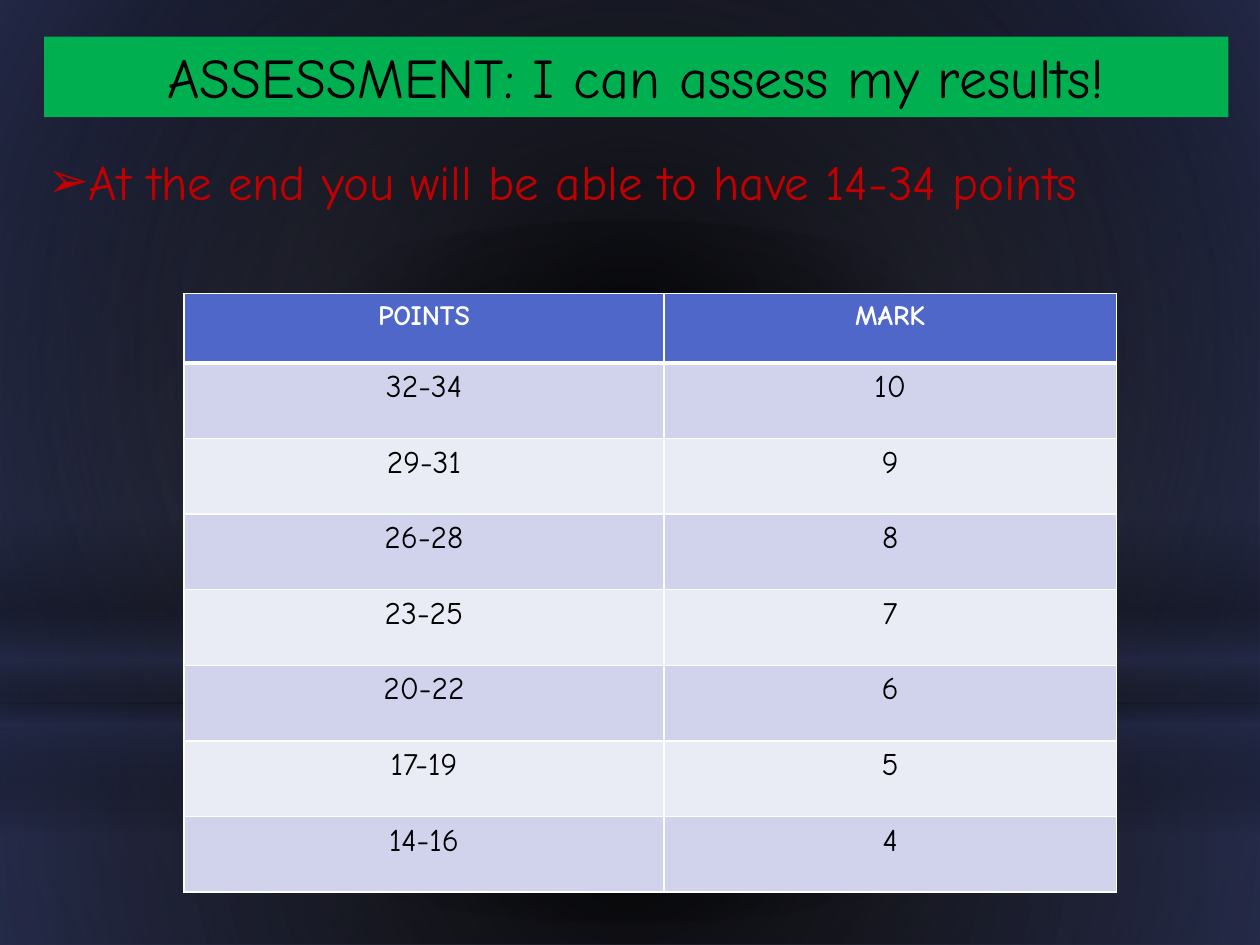
import pptx
import pptx.util
import pptx.dml.color
import pptx.enum.shapes
import pptx.enum.text
import pptx.oxml
import pptx.oxml.ns
from lxml import etree

Inches, Pt = pptx.util.Inches, pptx.util.Pt
RGB = pptx.dml.color.RGBColor
SHAPE = pptx.enum.shapes.MSO_SHAPE
ALIGN = pptx.enum.text.PP_ALIGN
ANCHOR = pptx.enum.text.MSO_ANCHOR
qn = pptx.oxml.ns.qn

# Content
TITLE = "ASSESSMENT: I can assess my results!"
INTRO = "At the end you will be able to have 14-34 points"
HEADER = ("POINTS", "MARK")
MARKS = [
    ("32-34", "10"),
    ("29-31", "9"),
    ("26-28", "8"),
    ("23-25", "7"),
    ("20-22", "6"),
    ("17-19", "5"),
    ("14-16", "4"),
]

# Look
FONT = "Comic Neue"
BLACK, WHITE = RGB(0, 0, 0), RGB(255, 255, 255)
GREEN, RED = RGB(0x00, 0xB0, 0x50), RGB(0xC0, 0x00, 0x00)
BLUE = RGB(0x4E, 0x67, 0xC8)
BANDS = (RGB(0xD0, 0xD3, 0xEB), RGB(0xE9, 0xEB, 0xF5))
NAVY = RGB(0x21, 0x27, 0x45)
HAZE = (RGB(0x7B, 0x7F, 0x9E), RGB(0x5E, 0x62, 0x80), RGB(0x2C, 0x30, 0x4C))

# Gradient stops: position, colour, opacity (percent)
BACKDROP = list(zip((0, 42, 100), HAZE, (100, 100, 100)))
CENTRE = (50, 50, 50, 50)
W, H = 10, 7.5
LAYERS = [  # shape, top, height, stops, centre (None = vertical)
    (SHAPE.RECTANGLE, 5.58, 1.92,
     [(0, BLACK, 91), (37, BLACK, 76), (100, NAVY, 79)], CENTRE),
    (SHAPE.RECTANGLE, 0, 5.58,
     [(0, BLACK, 89), (48, BLACK, 62), (100, NAVY, 79)], CENTRE),
    (SHAPE.RECTANGLE, 4.12, 2.5,
     [(0, BLACK, 0), (29, BLACK, 30), (45, NAVY, 40), (55, BLACK, 26),
      (65, NAVY, 60), (100, BLACK, 0)], None),
    (SHAPE.OVAL, 1.75, 5.58, [(0, BLACK, 100), (56, BLACK, 0)], CENTRE),
]


def set_gradient(fill, holder, stops, centre):
    """Swap the solid fill inside holder for a gradient."""
    fill.solid()
    fill.fore_color.rgb = BLACK
    solid = holder.find(".//" + qn("a:solidFill"))
    grad = etree.Element(qn("a:gradFill"), rotWithShape="1")
    gs_list = etree.SubElement(grad, qn("a:gsLst"))
    for pos, color, opacity in stops:
        gs = etree.SubElement(gs_list, qn("a:gs"), pos=str(pos * 1000))
        clr = etree.SubElement(gs, qn("a:srgbClr"), val=str(color))
        if opacity < 100:
            etree.SubElement(clr, qn("a:alpha"), val=str(opacity * 1000))
    if centre:
        circle = etree.SubElement(grad, qn("a:path"), path="circle")
        etree.SubElement(circle, qn("a:fillToRect"),
                         {side: str(v * 1000) for side, v in zip("ltrb", centre)})
    else:
        etree.SubElement(grad, qn("a:lin"), ang="5400000", scaled="0")
    solid.getparent().replace(solid, grad)


def add_shape(kind, left, top, width, height):
    sp = s.shapes.add_shape(kind, *map(Inches, (left, top, width, height)))
    sp.shadow.inherit = False
    sp.line.fill.background()
    return sp


def write(tf, text, size, color, align=ALIGN.CENTER, bold=False):
    tf.text = text
    p = tf.paragraphs[0]
    p.alignment = align
    font = p.runs[0].font
    font.name, font.size, font.bold = FONT, Pt(size), bold
    font.color.rgb = color
    return p


def set_borders(cell, bottom):
    tc_pr = cell._tc.get_or_add_tcPr()
    widths = {"lnL": 1, "lnR": 1, "lnT": 1, "lnB": bottom}
    for i, (tag, width) in enumerate(widths.items()):
        ln = etree.Element(qn("a:" + tag), w=str(Pt(width)))
        fill = etree.SubElement(ln, qn("a:solidFill"))
        etree.SubElement(fill, qn("a:srgbClr"), val=str(WHITE))
        tc_pr.insert(i, ln)


prs = pptx.Presentation()
prs.slide_width, prs.slide_height = Inches(W), Inches(H)
s = prs.slides.add_slide(prs.slide_layouts[6])

# Background and its glow layers
set_gradient(s.background.fill, s.element, BACKDROP, (24, 44, 24, 12))
for kind, top, height, stops, centre in LAYERS:
    sp = add_shape(kind, 0, top, W, height)
    set_gradient(sp.fill, sp.element, stops, centre)

# Title bar
bar = add_shape(SHAPE.RECTANGLE, 0.35, 0.29, 9.4, 0.64)
bar.fill.solid()
bar.fill.fore_color.rgb = GREEN
bar.text_frame.word_wrap = True
bar.text_frame.vertical_anchor = ANCHOR.TOP
write(bar.text_frame, TITLE, 32, BLACK)

# Bulleted introduction
box = s.shapes.add_textbox(*map(Inches, (0.28, 1.15, 9.72, 1.78)))
box.text_frame.word_wrap = True
p = write(box.text_frame, INTRO, 28, RED, ALIGN.LEFT)
p_pr = p._p.get_or_add_pPr()
p_pr.set("marL", str(Inches(0.31)))
p_pr.set("indent", str(-Inches(0.31)))
etree.SubElement(p_pr, qn("a:buFont"), typeface="Wingdings 2")
etree.SubElement(p_pr, qn("a:buChar"), char="➢")
p_pr.find(qn("a:buFont")).set("typeface", "Arial")

# Marks table
rows = [HEADER] + MARKS
table = s.shapes.add_table(len(rows), len(HEADER),
                           *map(Inches, (1.46, 2.33, 7.4, 4.74))).table
for col, width in zip(table.columns, (3.81, 3.59)):
    col.width = Inches(width)
for i, row in enumerate(rows):
    head = i == 0
    table.rows[i].height = Inches(0.55 if head else 0.6)
    for j, text in enumerate(row):
        cell = table.cell(i, j)
        cell.fill.solid()
        cell.fill.fore_color.rgb = BLUE if head else BANDS[(i - 1) % 2]
        set_borders(cell, 3 if head else 1)
        write(cell.text_frame, text, 16 if head else 18,
              WHITE if head else BLACK, bold=head)

prs.save("out.pptx")
